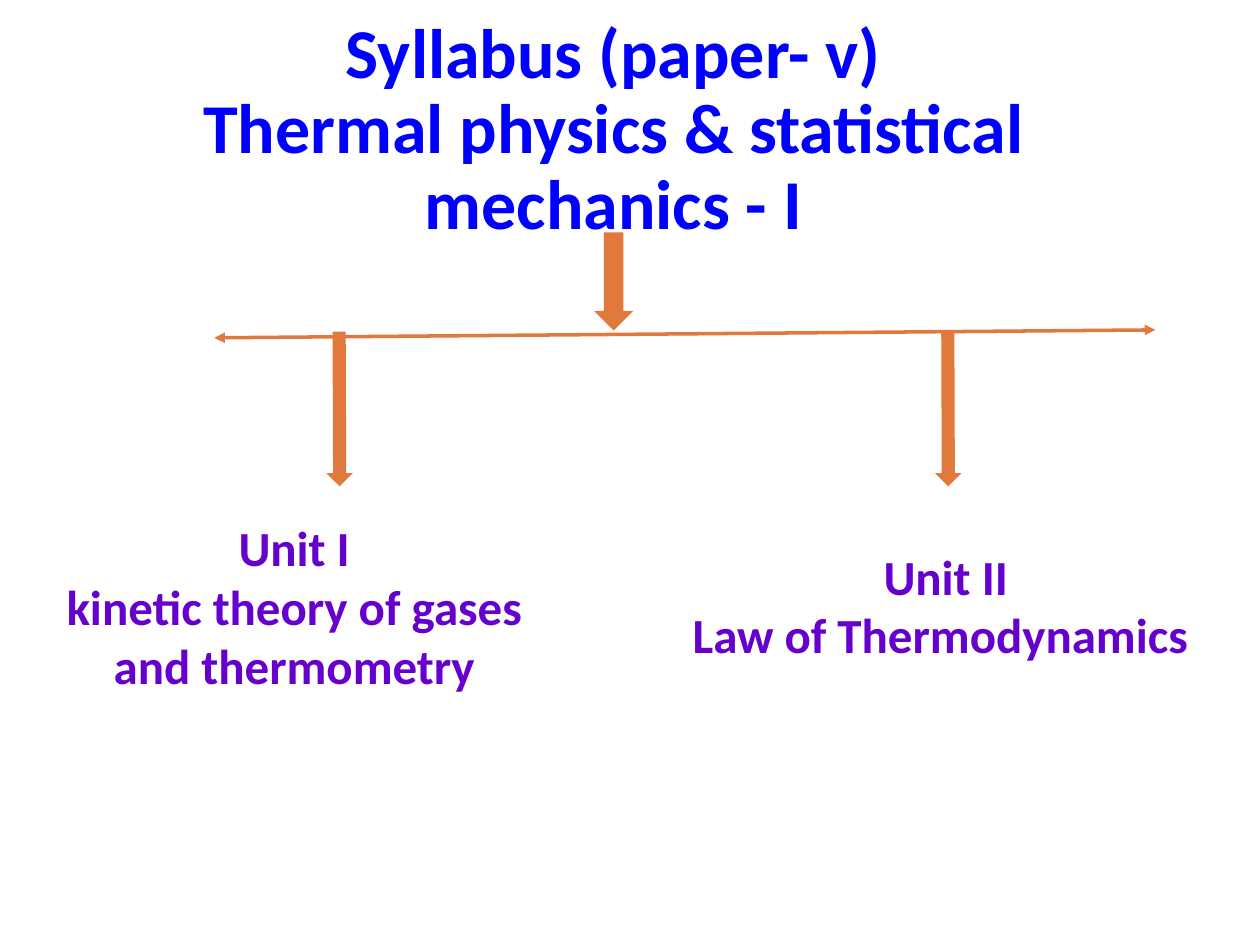
from lxml import etree
from pptx import Presentation
from pptx.dml.color import RGBColor
from pptx.enum.shapes import MSO_CONNECTOR, MSO_SHAPE
from pptx.enum.text import MSO_ANCHOR, MSO_AUTO_SIZE, PP_ALIGN
from pptx.oxml.ns import qn
from pptx.util import Cm, Pt

COLORS = {"title": "0000FF", "arrow": "E1793C", "unit": "6600CC"}


def rgb(name):
    return RGBColor.from_string(COLORS[name])


def write(tf, lines, anchor, size, color, spacing):
    tf.word_wrap = True
    tf.auto_size = MSO_AUTO_SIZE.NONE
    tf.vertical_anchor = anchor
    tf.text = "\n".join(lines)
    fmt = {"name": "Calibri", "size": Pt(size), "bold": True}
    for p in tf.paragraphs:
        p.alignment = PP_ALIGN.CENTER
        p.line_spacing = spacing
        for r in p.runs:
            for key, value in fmt.items():
                setattr(r.font, key, value)
            r.font.color.rgb = rgb(color)


prs = Presentation()
prs.slide_width, prs.slide_height = Cm(25.4), Cm(19.05)
s = prs.slides.add_slide(prs.slide_layouts[5])

# Title
title = s.shapes.title
box = {"left": 1.14, "top": 0.56, "width": 22.45, "height": 4.17}
for key, value in box.items():
    setattr(title, key, Cm(value))
write(title.text_frame,
      ["Syllabus (paper- v)\vThermal physics & statistical mechanics - I"],
      MSO_ANCHOR.MIDDLE, 40, "title", 0.9)

# Branch line with a head at each end
line = s.shapes.add_connector(MSO_CONNECTOR.STRAIGHT,
                              Cm(4.32), Cm(6.81), Cm(23.29), Cm(6.65))
line.line.color.rgb = rgb("arrow")
line.line.width = Pt(2)
ln = line.line._get_or_add_ln()
for end in ("a:headEnd", "a:tailEnd"):
    etree.SubElement(ln, qn(end), type="triangle")
etree.SubElement(line._element.spPr, qn("a:effectLst"))

# Downward arrows: one from the title, one to each unit
for x, y, w, h, angle in [(11.38, 5.28, 1.98, 0.79, 90),
                          (5.28, 7.98, 3.12, 0.53, 89.8),
                          (17.55, 7.98, 3.12, 0.53, 89.8)]:
    sp = s.shapes.add_shape(MSO_SHAPE.RIGHT_ARROW, Cm(x), Cm(y), Cm(w), Cm(h))
    sp.rotation = angle
    sp.shadow.inherit = False
    sp.fill.solid()
    sp.fill.fore_color.rgb = rgb("arrow")
    sp.line.fill.background()

# Units
units = [
    (0.38, 10.31, 11.1, 3.76, MSO_ANCHOR.TOP,
     ["Unit I", "kinetic theory of gases and thermometry"]),
    (12.73, 10.9, 12.67, 2.59, MSO_ANCHOR.MIDDLE,
     ["Unit II", "Law of Thermodynamics "]),
]
for x, y, w, h, anchor, lines in units:
    tb = s.shapes.add_textbox(Cm(x), Cm(y), Cm(w), Cm(h))
    write(tb.text_frame, lines, anchor, 28, "unit", 1.0)

prs.save("out.pptx")
